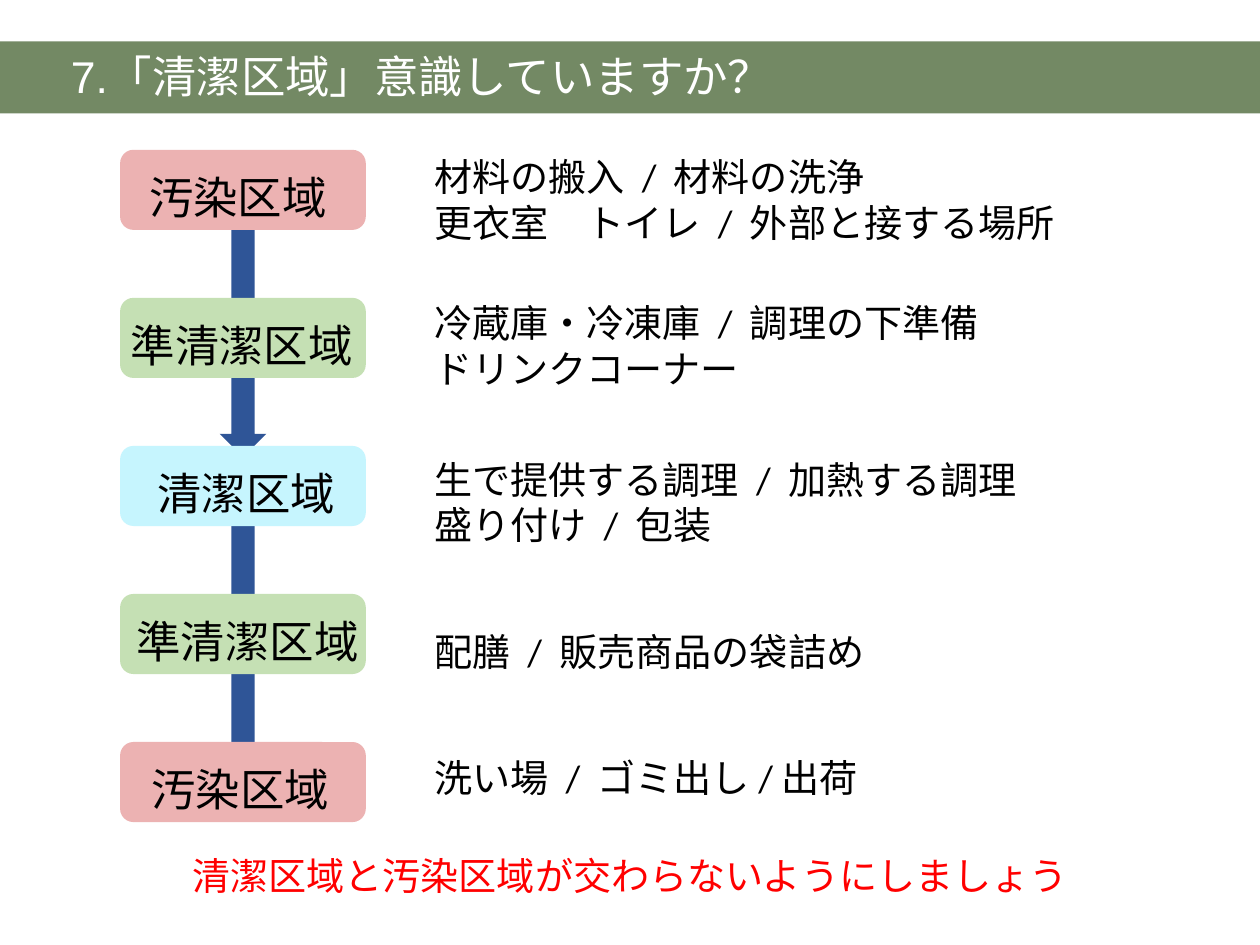
from dataclasses import dataclass

from lxml.etree import SubElement
from pptx import Presentation
from pptx.dml.color import RGBColor
from pptx.enum.shapes import MSO_SHAPE as SHAPE
from pptx.enum.text import MSO_ANCHOR as ANCHOR, MSO_AUTO_SIZE as AUTO, PP_ALIGN as ALIGN
from pptx.oxml.ns import qn
from pptx.util import Cm, Pt


@dataclass(frozen=True)
class Theme:
    band: str = "385723"
    arrow: str = "2F5597"
    dirty: str = "ECB2B2"
    semi: str = "C5E0B4"
    clean: str = "C6F5FE"
    text: str = "000000"
    light: str = "FFFFFF"
    warning: str = "FF0000"
    title_font: str = "Arial"
    font: str = "Calibri"
    large: int = 28
    body: int = 24


THEME = Theme()

# label, fill, label inset, activities, offset of activities from the stage top (cm)
STAGES = [
    ("汚染区域", THEME.dirty, 0.56,
     "材料の搬入  /  材料の洗浄\n更衣室　トイレ  /  外部と接する場所", -0.05),
    ("準清潔区域", THEME.semi, 0.15,
     "冷蔵庫・冷凍庫  /  調理の下準備\nドリンクコーナー", -0.08),
    ("清潔区域", THEME.clean, 0.74,
     "生で提供する調理  /  加熱する調理\n盛り付け  /  包装", 0.1),
    ("準清潔区域", THEME.semi, 0.28, "配膳  /  販売商品の袋詰め", 0.63),
    ("汚染区域", THEME.dirty, 0.61, "洗い場  /  ゴミ出し / 出荷", 0.15),
]


def write(shape, text, size, color, font=THEME.font, align=ALIGN.LEFT):
    tf = shape.text_frame
    tf.text = text
    tf.word_wrap = True
    tf.auto_size = AUTO.NONE
    tf.vertical_anchor = ANCHOR.TOP
    for p in tf.paragraphs:
        p.alignment = align
        for r in p.runs:
            r.font.name = font
            r.font.size = Pt(size)
            r.font.color.rgb = RGBColor.from_string(color)


def add_filled(s, kind, x, y, w, h, color):
    sp = s.shapes.add_shape(kind, Cm(x), Cm(y), Cm(w), Cm(h))
    sp.shadow.inherit = False
    sp.fill.solid()
    sp.fill.fore_color.rgb = RGBColor.from_string(color)
    sp.line.fill.background()
    return sp


def add_text(s, x, y, w, h, text, color=THEME.text, align=ALIGN.LEFT):
    tb = s.shapes.add_textbox(Cm(x), Cm(y), Cm(w), Cm(h))
    write(tb, text, THEME.body, color, align=align)


def add_header(s, x, y, w, h):
    """Translucent band with the slide title on it."""
    band = add_filled(s, SHAPE.RECTANGLE, x, y, w, h, THEME.band)
    color = band.fill._xPr.find(qn("a:solidFill"))[0]
    SubElement(color, qn("a:alpha"), val="70000")
    title = s.shapes.title
    title.left, title.top = Cm(x + 1.32), Cm(y + 0.05)
    title.width, title.height = Cm(18.57), Cm(1.45)
    write(title, "7.「清潔区域」意識していますか？", THEME.large, THEME.light, THEME.title_font)
    band.element.addnext(title.element)


def add_flow(s, x, y, w, h, box_w=5.46, box_h=1.78):
    """Stages at equal steps down the box, with their activities to the right."""
    step = (h - box_h) / (len(STAGES) - 1)
    arrow_w, text_x = 1.04, x + 6.73
    for first, start, length in ((0, 0.4, 6.43), (2, 0.64, 6.55)):
        add_filled(s, SHAPE.DOWN_ARROW, x + (box_w - arrow_w) / 2, y + first * step + start,
                   arrow_w, length, THEME.arrow)
    for i, (label, color, inset, activities, offset) in enumerate(STAGES):
        top = y + i * step
        sp = add_filled(s, SHAPE.ROUNDED_RECTANGLE, x, top, box_w, box_h, color)
        write(sp, label, THEME.large, THEME.text)
        tf = sp.text_frame
        tf.margin_left, tf.margin_top = Cm(inset), Cm(0.37)
        tf.margin_right = tf.margin_bottom = 0
        lines = activities.count("\n") + 1
        add_text(s, text_x, top + offset, x + w - text_x, 0.25 + 1.03 * lines, activities)


def main():
    prs = Presentation()
    prs.slide_width, prs.slide_height = Cm(28), Cm(21)
    s = prs.slides.add_slide(prs.slide_layouts.get_by_name("Title Only"))
    add_header(s, 0, 0.92, 28, 1.6)
    add_flow(s, 2.67, 3.33, 24.03, 14.94)
    add_text(s, 3.3, 18.82, 21.4, 1.28, "清潔区域と汚染区域が交わらないようにしましょう",
             THEME.warning, ALIGN.CENTER)
    prs.save("out.pptx")


if __name__ == "__main__":
    main()
